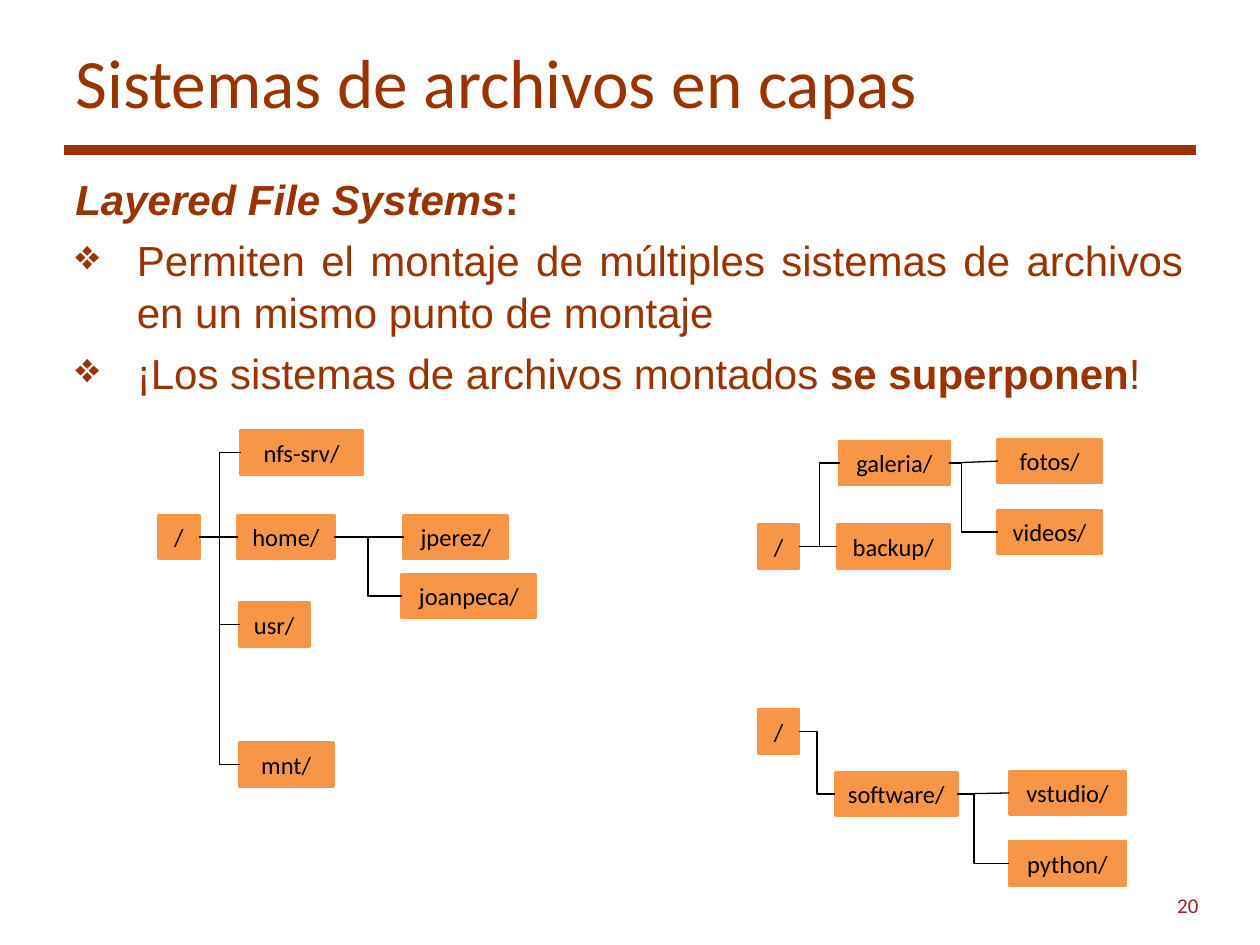
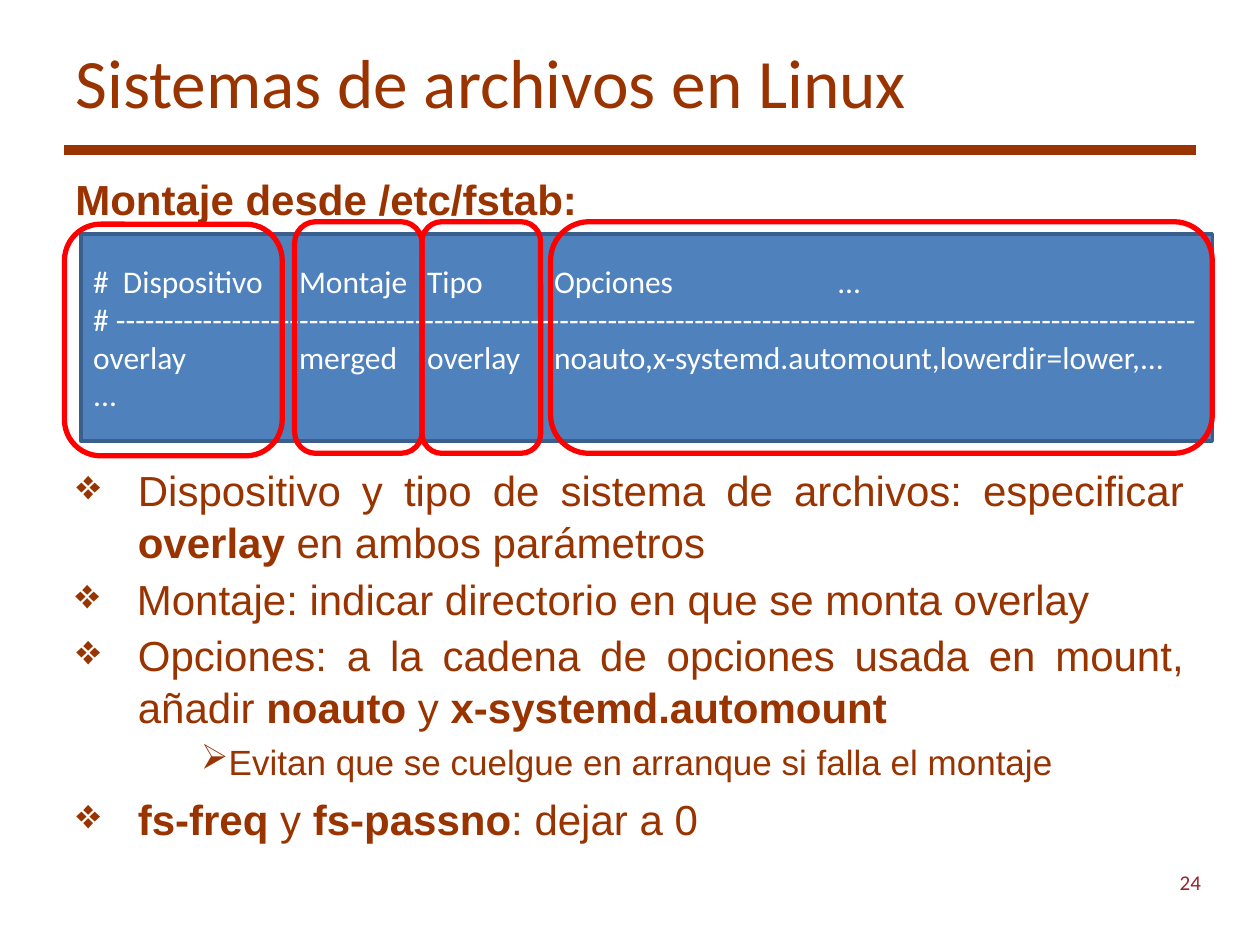
from lxml import etree
from pptx import Presentation
from pptx.dml.color import RGBColor
from pptx.enum.shapes import MSO_CONNECTOR, MSO_SHAPE
from pptx.enum.text import MSO_ANCHOR, PP_ALIGN
from pptx.oxml.ns import qn
from pptx.util import Cm, Pt

RUST = RGBColor(0x99, 0x33, 0x00)
WINE = RGBColor(0x9B, 0x21, 0x2C)
ORANGE = RGBColor(0xF7, 0x96, 0x46)
BLUE = RGBColor(0x4F, 0x81, 0xBD)
DARK_BLUE = RGBColor(0x3A, 0x5F, 0x8C)
RED = RGBColor(0xFF, 0x00, 0x00)
BLACK = RGBColor(0x00, 0x00, 0x00)
WHITE = RGBColor(0xFF, 0xFF, 0xFF)

LEFT, CENTER, RIGHT, JUSTIFY = PP_ALIGN.LEFT, PP_ALIGN.CENTER, PP_ALIGN.RIGHT, PP_ALIGN.JUSTIFY
TOP, MIDDLE = MSO_ANCHOR.TOP, MSO_ANCHOR.MIDDLE
RECT, ROUNDED = MSO_SHAPE.RECTANGLE, MSO_SHAPE.ROUNDED_RECTANGLE
STRAIGHT, ELBOW = MSO_CONNECTOR.STRAIGHT, MSO_CONNECTOR.ELBOW

HEADING_FONT, BODY_FONT = "Calibri", "Arial"
NODE_HEIGHT = 0.87
RIGHT_SITE, LEFT_SITE = 3, 1
LEVELS = {
    "plain": (24, None, 0, 0),
    "bullet": (24, "❖", 1.24, -1.24),
    "sub": (20, "➢", 1.75, 0.76),
}


class Deck:
    def __init__(self):
        self.prs = Presentation()
        self.prs.slide_width, self.prs.slide_height = Cm(25.4), Cm(19.05)
        self.s = None

    def slide(self, title, number, number_at):
        self.s = self.prs.slides.add_slide(self.prs.slide_layouts[6])
        rule = self.line(STRAIGHT, RUST, 6)
        rule.begin_x, rule.begin_y = Cm(1.3), Cm(3.02)
        rule.end_x, rule.end_y = Cm(24.1), Cm(3.02)
        self.label(title, (1.27, 0.76, 23.16, 1.75), 39.6, RUST, LEFT)
        self.label(number, (*number_at, 5.92, 1.02), 12, WINE, RIGHT)

    def frame(self, box, anchor):
        tf = self.s.shapes.add_textbox(*map(Cm, box)).text_frame
        tf.word_wrap = True
        tf.vertical_anchor = anchor
        return tf

    def style(self, font, name, size, color):
        font.name, font.size, font.color.rgb = name, Pt(size), color

    def label(self, text, box, size, color, align):
        tf = self.frame(box, MIDDLE)
        tf.text = text
        p = tf.paragraphs[0]
        p.alignment = align
        self.style(p.runs[0].font, HEADING_FONT, size, color)

    def body(self, box, items):
        tf = self.frame(box, TOP)
        for i, (level, runs) in enumerate(items):
            p = tf.paragraphs[0] if i == 0 else tf.add_paragraph()
            size, bullet, margin, indent = LEVELS[level]
            if bullet:
                pPr = p._p.get_or_add_pPr()
                pPr.set("marL", str(Cm(margin)))
                pPr.set("indent", str(Cm(indent)))
                etree.SubElement(pPr, qn("a:buChar"), char=bullet)
            p.alignment = JUSTIFY
            p.line_spacing = 1.04
            if i:
                p.space_before = Pt(size * 0.2)
            for text, marks in runs:
                r = p.add_run()
                r.text = text
                self.style(r.font, BODY_FONT, size, RUST)
                r.font.bold, r.font.italic = "b" in marks, "i" in marks

    def shape(self, kind, box, fill, line, width):
        sp = self.s.shapes.add_shape(kind, *map(Cm, box))
        sp.shadow.inherit = False
        if fill is None:
            sp.fill.background()
        else:
            sp.fill.solid()
            sp.fill.fore_color.rgb = fill
        sp.line.color.rgb, sp.line.width = line, Pt(width)
        return sp

    def line(self, kind, color, width):
        cx = self.s.shapes.add_connector(kind, 0, 0, 0, 0)
        cx.line.color.rgb, cx.line.width = color, Pt(width)
        etree.SubElement(cx._element.spPr, qn("a:effectLst"))
        return cx

    def link(self, parent, child, bend):
        level = abs(parent.top - child.top) < Cm(0.1)
        cx = self.line(STRAIGHT if level else ELBOW, BLACK, 0.75)
        cx.begin_connect(parent, RIGHT_SITE)
        cx.end_connect(child, LEFT_SITE)
        if not level:
            geom = cx._element.spPr.find(qn("a:prstGeom"))
            av = geom.find(qn("a:avLst"))
            if av is None:
                av = etree.SubElement(geom, qn("a:avLst"))
            etree.SubElement(av, qn("a:gd"), name="adj1", fmla=f"val {round(bend * 100000)}")

    def tree(self, name, x, y, w, children=(), bend=0.5):
        sp = self.shape(RECT, (x, y, w, NODE_HEIGHT), ORANGE, ORANGE, 2)
        tf = sp.text_frame
        tf.text = name
        tf.word_wrap = False
        tf.vertical_anchor = MIDDLE
        p = tf.paragraphs[0]
        p.alignment = CENTER
        self.style(p.runs[0].font, HEADING_FONT, 14, BLACK)
        for child in children:
            self.link(sp, self.tree(*child), bend)
        return sp

    def code(self, box, lines, stops):
        tf = self.shape(RECT, box, BLUE, DARK_BLUE, 2).text_frame
        tf.word_wrap = True
        tf.vertical_anchor = MIDDLE
        for i, text in enumerate(lines):
            p = tf.paragraphs[0] if i == 0 else tf.add_paragraph()
            p.text = text
            tabs = etree.SubElement(p._p.get_or_add_pPr(), qn("a:tabLst"))
            for stop in stops:
                etree.SubElement(tabs, qn("a:tab"), pos=str(Cm(stop)), algn="l")
            p.alignment = LEFT
            self.style(p.runs[0].font, HEADING_FONT, 18, WHITE)


def layered_slide(deck):
    deck.slide("Sistemas de archivos en capas", "20", (18.49, 17.73))
    deck.body((1.27, 3.33, 22.83, 3.12), [
        ("plain", [("Layered File Systems", "bi"), (":", "b")]),
        ("bullet", [("Permiten el montaje de múltiples sistemas de archivos "
                     "en un mismo punto de montaje", "")]),
        ("bullet", [("¡Los sistemas de archivos montados ", ""),
                    ("se superponen", "b"), ("!", "")]),
    ])
    deck.tree("/", 15.29, 10.58, 0.81, [
        ("galeria/", 16.93, 8.9, 2.2, [
            ("fotos/", 20.12, 8.86, 2.08),
            ("videos/", 20.12, 10.29, 2.08),
        ], 0.26),
        ("backup/", 16.88, 10.58, 2.26),
    ])
    deck.tree("/", 15.29, 14.31, 0.81, [
        ("software/", 16.84, 15.57, 2.46, [
            ("vstudio/", 20.35, 15.55, 2.34),
            ("python/", 20.35, 16.97, 2.34),
        ], 0.32),
    ])
    deck.tree("/", 3.2, 10.39, 0.81, [
        ("nfs-srv/", 4.85, 8.69, 2.46),
        ("home/", 4.8, 10.39, 1.93, [
            ("jperez/", 8.15, 10.39, 2.08),
            ("joanpeca/", 8.11, 11.58, 2.69),
        ]),
        ("usr/", 4.83, 12.16, 1.4),
        ("mnt/", 4.83, 14.98, 1.88),
    ])


def fstab_slide(deck):
    deck.slide("Sistemas de archivos en Linux", "24", (18.54, 17.27))
    deck.body((1.27, 3.33, 22.83, 3.12), [("plain", [("Montaje desde /etc/fstab:", "b")])])
    deck.code((1.63, 4.72, 22.81, 4.17), [
        "#\tDispositivo\tMontaje\tTipo\tOpciones\t...",
        "# " + "-" * 112,
        "overlay\tmerged\toverlay\tnoauto,x-systemd.automount,lowerdir=lower,...",
        "...",
    ], (0.6, 4.15, 6.73, 9.29, 15))
    for x, y, w in ((1.3, 4.52, 4.39), (5.94, 4.47, 2.57), (8.51, 4.47, 2.39), (11.1, 4.47, 13.34)):
        deck.shape(ROUNDED, (x, y, w, 4.67), None, RED, 3)
    deck.body((1.29, 9.19, 22.83, 3.12), [
        ("bullet", [("Dispositivo y tipo de sistema de archivos: especificar ", ""),
                    ("overlay", "b"), (" en ambos parámetros", "")]),
    ])
    deck.body((1.27, 11.4, 22.83, 2), [
        ("bullet", [("Montaje: indicar directorio en que se monta overlay", "")]),
    ])
    deck.body((1.29, 12.52, 22.83, 2), [
        ("bullet", [("Opciones: a la cadena de opciones usada en mount, añadir ", ""),
                    ("noauto", "b"), (" y ", ""), ("x-systemd.automount", "b")]),
        ("sub", [("Evitan que se cuelgue en arranque si falla el montaje", "")]),
        ("bullet", [("fs-freq", "b"), (" y ", ""), ("fs-passno", "b"), (": dejar a 0", "")]),
    ])


def main():
    deck = Deck()
    layered_slide(deck)
    fstab_slide(deck)
    deck.prs.save("out.pptx")


if __name__ == "__main__":
    main()
